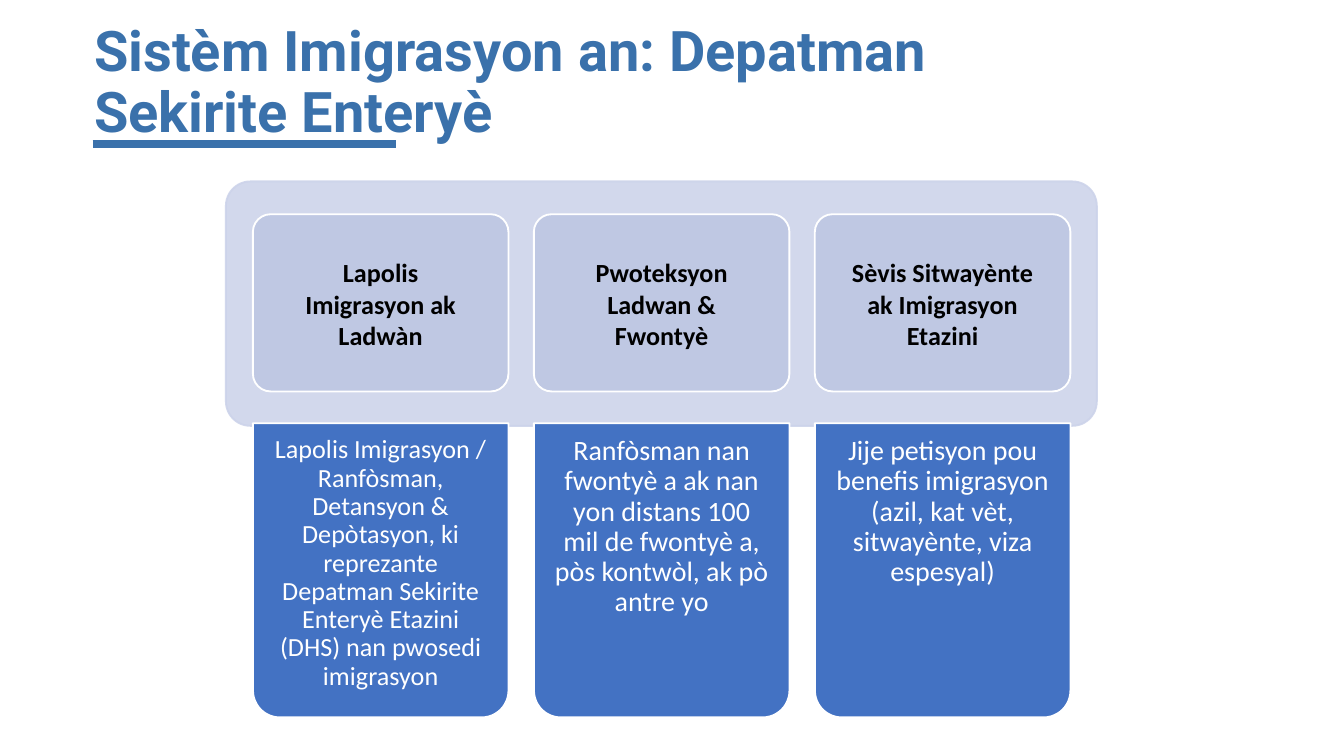
from pptx import Presentation
from pptx.dml.color import RGBColor
from pptx.enum.shapes import MSO_CONNECTOR, MSO_SHAPE
from pptx.enum.text import MSO_ANCHOR, PP_ALIGN
from pptx.oxml.ns import qn
from pptx.util import Cm, Pt
from lxml.etree import SubElement

BLUE, WHITE = "3A71AB", "FFFFFF"
LEFT, STEP, WIDTH = 4.78, 5.31, 4.83
CARDS = [
    ("Lapolis Imigrasyon ak Ladwàn", 3.68, 14,
     "Lapolis Imigrasyon / Ranfòsman, Detansyon & Depòtasyon, ki reprezante "
     "Depatman Sekirite Enteryè Etazini (DHS) nan pwosedi imigrasyon"),
    ("Pwoteksyon Ladwan & Fwontyè", 3.15, 15,
     "Ranfòsman nan fwontyè a ak nan yon distans 100 mil de fwontyè a, "
     "pòs kontwòl, ak pò antre yo"),
    ("Sèvis Sitwayènte ak Imigrasyon Etazini", 4.19, 15,
     "Jije petisyon pou benefis imigrasyon (azil, kat vèt, sitwayènte, viza espesyal)"),
]


def color(code):
    return RGBColor.from_string(code)


class Deck:
    """Holds the style and the current slide."""

    def __init__(self, slide, font="Calibri"):
        self.slide = slide
        self.font = font

    def rule(self, left, right, top, ink, weight):
        line = self.slide.shapes.add_connector(
            MSO_CONNECTOR.STRAIGHT, Cm(left), Cm(top), Cm(right), Cm(top))
        line.line.color.rgb = color(ink)
        line.line.width = Pt(weight)
        SubElement(line._element.spPr, qn("a:effectLst"))

    def block(self, kind, box, fill, edge, curves, turn=0, alpha=None):
        shape = self.slide.shapes.add_shape(kind, *map(Cm, box))
        shape.shadow.inherit = False
        shape.rotation = turn
        for i, curve in enumerate(curves):
            shape.adjustments[i] = curve
        shape.fill.solid()
        shape.fill.fore_color.rgb = color(fill)
        shape.line.color.rgb = color(edge)
        shape.line.width = Pt(1)
        if alpha:
            for tint in shape._element.spPr.iter(qn("a:srgbClr")):
                SubElement(tint, qn("a:alpha"), val=str(alpha * 1000))

    def text(self, words, box, size, ink, bold=False, font=None, pad=(0.25, 0.25),
             align=PP_ALIGN.CENTER, anchor=MSO_ANCHOR.TOP, space=0.9):
        frame = self.slide.shapes.add_textbox(*map(Cm, box)).text_frame
        frame.word_wrap = True
        frame.vertical_anchor = anchor
        frame.margin_left = frame.margin_right = Cm(pad[0])
        frame.margin_top = frame.margin_bottom = Cm(pad[1])
        para = frame.paragraphs[0]
        para.text = words
        para.alignment = align
        para.line_spacing = space
        para.font.name = font or self.font
        para.font.size = Pt(size)
        para.font.bold = bold
        para.font.color.rgb = color(ink)


def main():
    prs = Presentation()
    prs.slide_width, prs.slide_height = Cm(25.4), Cm(14.29)
    deck = Deck(prs.slides.add_slide(prs.slide_layouts[6]))

    deck.rule(1.75, 7.49, 2.72, BLUE, 4.5)
    deck.text("Sistèm Imigrasyon an: Depatman Sekirite Enteryè", (1.6, 0, 17.27, 3.18),
              30, BLUE, bold=True, font="Roboto", pad=(0.18, 0.1),
              align=PP_ALIGN.LEFT, anchor=MSO_ANCHOR.MIDDLE)
    deck.block(MSO_SHAPE.ROUNDED_RECTANGLE, (4.27, 3.43, 16.46, 4.62),
               "CCD3EA", "CCD3EA", [0.1], alpha=88)

    for i, (head, span, size, body) in enumerate(CARDS):
        left = LEFT + i * STEP
        deck.block(MSO_SHAPE.ROUNDED_RECTANGLE, (left, 4.05, WIDTH, 3.35),
                   "BFC8E3", WHITE, [0.1])
        deck.block(MSO_SHAPE.ROUND_2_SAME_RECTANGLE, (left, 8, WIDTH, 5.56),
                   "4372C3", WHITE, [0.105, 0], turn=180)
        deck.text(body, (left + 0.14, 8, WIDTH - 0.28, 5.44), size, WHITE)
        deck.text(head, (left + (WIDTH - span) / 2, 4.72, span, 2.06), 14, "000000",
                  bold=True, pad=(0.25, 0.13), space=1.0)

    prs.save("out.pptx")


if __name__ == "__main__":
    main()
